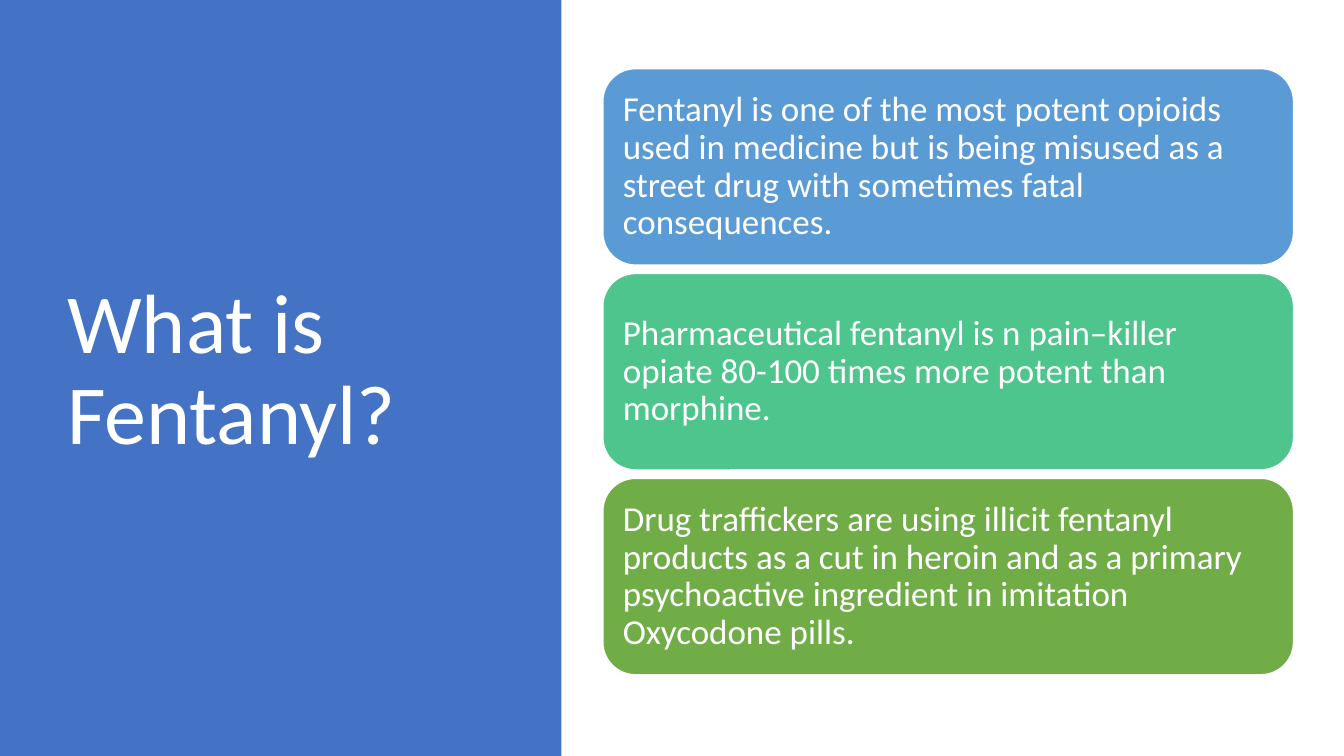
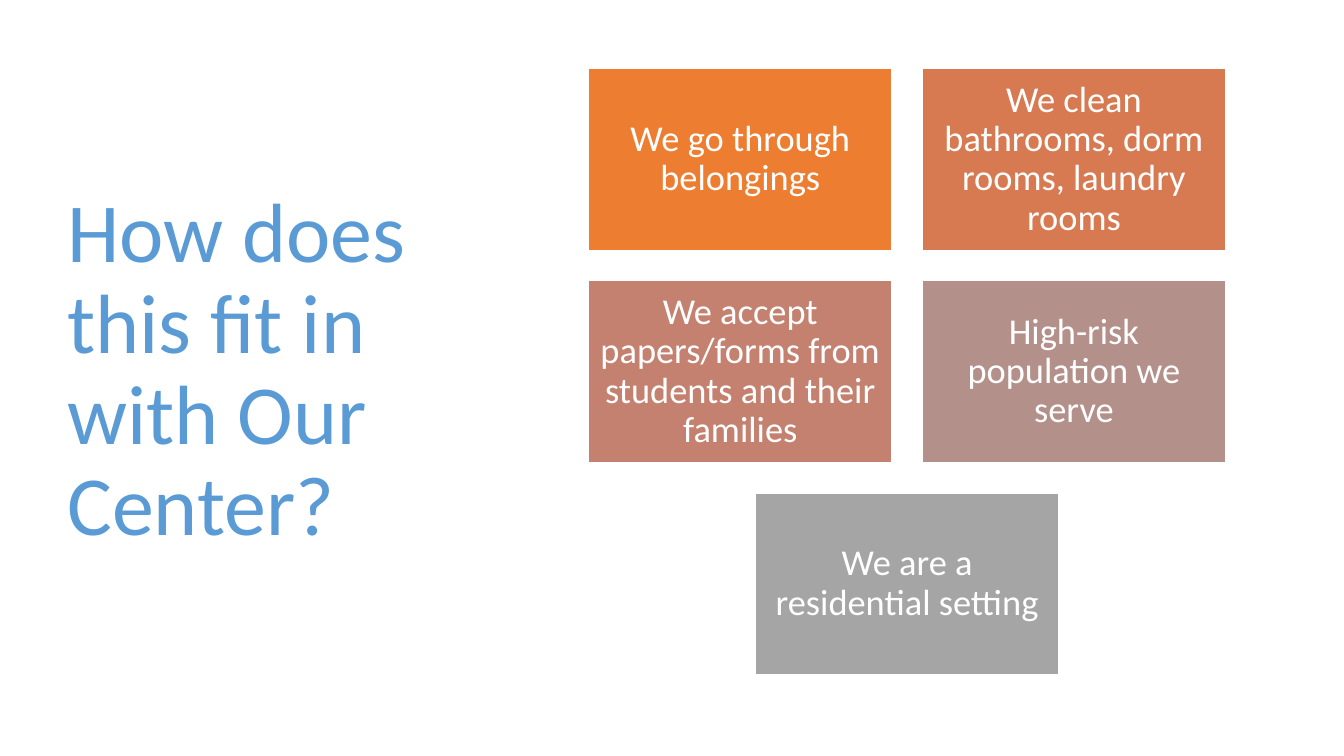
from pptx import Presentation
from pptx.dml.color import RGBColor
from pptx.enum.shapes import MSO_SHAPE
from pptx.enum.text import MSO_ANCHOR, PP_ALIGN
from pptx.util import Pt

RECT, ROUNDED = MSO_SHAPE.RECTANGLE, MSO_SHAPE.ROUNDED_RECTANGLE
MIDDLE = MSO_ANCHOR.MIDDLE
LEFT, CENTER = PP_ALIGN.LEFT, PP_ALIGN.CENTER

FONT = "Calibri"
WHITE, BLUE, SKY = "FFFFFF", "4472C4", "5B9BD5"
SLIDE_W, SLIDE_H = 960, 540
TOP, BODY_H = 49, 433
PANEL_BOX = (0, 0, 401, SLIDE_H)
TITLE_BOX = (41, TOP, 299.5, BODY_H)
STACK_BOX = (430.6, TOP, 493.4, BODY_H)
GRID_BOX = (420.5, TOP, 455, BODY_H)

FACTS = [
    ("Fentanyl is one of the most potent opioids used in medicine but is being "
     "misused as a street drug with sometimes fatal consequences.", SKY),
    ("Pharmaceutical fentanyl is n pain–killer opiate 80-100 times more potent "
     "than morphine.", "4DC58D"),
    ("Drug traffickers are using illicit fentanyl products as a cut in heroin and "
     "as a primary psychoactive ingredient in imitation Oxycodone pills.", "70AD47"),
]
RISKS = [
    ("We go through belongings", "ED7D31"),
    ("We clean bathrooms, dorm rooms, laundry rooms", "D87A51"),
    ("We accept papers/forms from students and their families", "C48170"),
    ("High-risk population we serve", "B4908B"),
    ("We are a residential setting", "A5A5A5"),
]


def rgb(value):
    """Turn a hex string into a colour."""
    return RGBColor.from_string(value)


def points(box):
    """Turn a box of numbers into lengths in points."""
    return [Pt(v) for v in box]


def write(shape, text, size, color, align, inset):
    """Write one vertically centred paragraph into a shape."""
    tf = shape.text_frame
    tf.word_wrap = True
    tf.vertical_anchor = MIDDLE
    tf.margin_left = tf.margin_right = tf.margin_top = tf.margin_bottom = Pt(inset)
    p = tf.paragraphs[0]
    p.text = text
    p.alignment = align
    p.line_spacing = 0.9
    p.font.name = FONT
    p.font.size = Pt(size)
    p.font.color.rgb = rgb(color)


def add_block(s, kind, box, fill, line=None):
    """Add a filled shape, outlined only when a line colour is given."""
    sp = s.shapes.add_shape(kind, *points(box))
    sp.shadow.inherit = False
    sp.fill.solid()
    sp.fill.fore_color.rgb = rgb(fill)
    if line:
        sp.line.color.rgb = rgb(line)
        sp.line.width = Pt(1)
    else:
        sp.line.fill.background()
    return sp


def add_title(s, box, text, color):
    """Add the large slide title."""
    write(s.shapes.add_textbox(*points(box)), text, 60, color, LEFT, 7.2)


def add_card(s, kind, box, text, fill, size, align):
    """Add a coloured card whose inset follows its text size."""
    write(add_block(s, kind, box, fill, WHITE), text, size, WHITE, align, size * 0.3)


def add_stack(s, box, items, gap=6):
    """Stack rounded cards of equal height in a box."""
    x, y, w, h = box
    card_h = (h - gap * (len(items) - 1)) / len(items)
    for i, (text, fill) in enumerate(items):
        card = (x, y + i * (card_h + gap), w, card_h)
        add_card(s, ROUNDED, card, text, fill, 25, LEFT)


def add_grid(s, box, items, cols=2, gap=21.6):
    """Lay cards out in rows, centring a short last row."""
    x, y, w, h = box
    rows = [items[i:i + cols] for i in range(0, len(items), cols)]
    card_w = (w - gap * (cols - 1)) / cols
    card_h = (h - gap * (len(rows) - 1)) / len(rows)
    for r, row in enumerate(rows):
        indent = (cols - len(row)) * (card_w + gap) / 2
        for c, (text, fill) in enumerate(row):
            card = (x + indent + c * (card_w + gap), y + r * (card_h + gap),
                    card_w, card_h)
            add_card(s, RECT, card, text, fill, 26, CENTER)


def main():
    """Build and save the presentation."""
    prs = Presentation()
    prs.slide_width, prs.slide_height = Pt(SLIDE_W), Pt(SLIDE_H)
    blank = prs.slide_layouts[6]

    s = prs.slides.add_slide(blank)
    add_block(s, RECT, PANEL_BOX, BLUE)
    add_title(s, TITLE_BOX, "What is Fentanyl?", WHITE)
    add_stack(s, STACK_BOX, FACTS)

    s = prs.slides.add_slide(blank)
    add_title(s, TITLE_BOX, "How does this fit in with Our Center?", SKY)
    add_grid(s, GRID_BOX, RISKS)

    prs.save("out.pptx")


if __name__ == "__main__":
    main()
